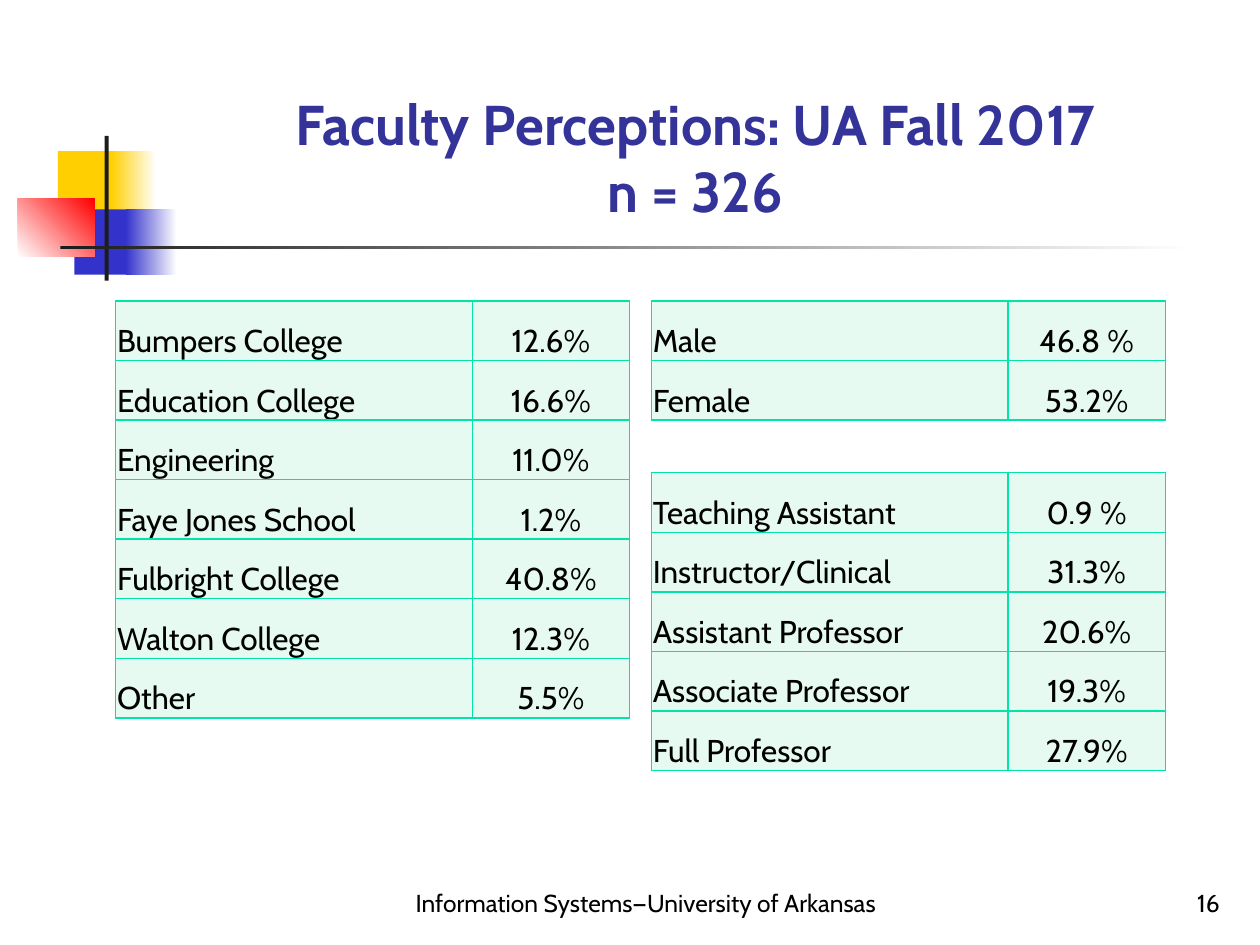
from pptx import Presentation
from pptx.dml.color import RGBColor
from pptx.enum.shapes import MSO_SHAPE
from pptx.enum.text import MSO_ANCHOR, MSO_AUTO_SIZE, PP_ALIGN
from pptx.oxml import parse_xml
from pptx.oxml.ns import nsdecls
from pptx.util import Cm, Pt

COLORS = {
    "title": "333399", "text": "000000", "dark": "1C1C1C", "white": "FFFFFF",
    "yellow": "FFCF01", "blue": "3333CC", "red": "FF0000",
    "cell": "E7FAF1", "border": "00E4A8",
}
FONT = "Cabin"
ROW_HEIGHT = 1.2
COLUMN_WIDTHS = (7.19, 3.17)
LEFT_TABLE, RIGHT_TABLE, TABLE_TOP = 2.33, 13.13, 6.07

# left, top, width, height, colours from start to end, gradient angle
ORNAMENT = [
    (1.17, 3.05, 1.22, 1.32, ["yellow"], 0),
    (2.24, 3.05, 0.91, 1.32, ["yellow", "white"], 0),
    (1.5, 4.22, 1.17, 1.32, ["blue"], 0),
    (2.54, 4.22, 1.02, 1.32, ["blue", "white"], 0),
    (0.36, 4.01, 1.55, 1.17, ["white", "red"], 45),
    (2.11, 2.74, 0.08, 2.92, ["dark"], 0),
    (1.22, 4.95, 22.86, 0.08, ["dark", "white"], 0),
]

COLLEGES = [
    ("Bumpers College", "12.6%"),
    ("Education College", "16.6%"),
    ("Engineering", "11.0%"),
    ("Faye Jones School", "1.2%"),
    ("Fulbright College", "40.8%"),
    ("Walton College", "12.3%"),
    ("Other", "5.5%"),
]
RANKS = [
    ("Teaching Assistant", "0.9 %"),
    ("Instructor/Clinical", "31.3%"),
    ("Assistant Professor", "20.6%"),
    ("Associate Professor", "19.3%"),
    ("Full Professor", "27.9%"),
]
GENDERS = [("Male", "46.8 %"), ("Female", "53.2%")]


def rgb(name):
    return RGBColor.from_string(COLORS[name])


def write(tf, text, align, size, color="text", bold=False):
    """Fill a text frame with one formatted, bottom-anchored paragraph."""
    tf.vertical_anchor = MSO_ANCHOR.BOTTOM
    p = tf.paragraphs[0]
    p.text = text
    p.alignment = align
    for r in p.runs:
        for name, value in {"name": FONT, "size": Pt(size), "bold": bold}.items():
            setattr(r.font, name, value)
        r.font.color.rgb = rgb(color)


def add_block(slide, left, top, width, height, colors, angle):
    sp = slide.shapes.add_shape(
        MSO_SHAPE.RECTANGLE, Cm(left), Cm(top), Cm(width), Cm(height))
    sp.shadow.inherit = False
    sp.line.fill.background()
    if len(colors) == 1:
        sp.fill.solid()
        sp.fill.fore_color.rgb = rgb(colors[0])
        return
    sp.fill.gradient()
    sp.fill.gradient_angle = angle
    for stop, color in zip(sp.fill.gradient_stops, colors):
        stop.color.rgb = rgb(color)


def set_title(slide, text):
    title = slide.shapes.title
    box = {"left": 3.2, "top": 0.58, "width": 21.64, "height": 4.06}
    for name, value in box.items():
        setattr(title, name, Cm(value))
    tf = title.text_frame
    tf.auto_size = MSO_AUTO_SIZE.NONE
    write(tf, text, PP_ALIGN.CENTER, 32, "title", True)


def add_footer(slide, left, width, text, align):
    sp = slide.shapes.add_textbox(Cm(left), Cm(17.35), Cm(width), Cm(1.27))
    sp.text_frame.word_wrap = True
    write(sp.text_frame, text, align, 14)


def add_borders(cell):
    tc_pr = cell._tc.get_or_add_tcPr()
    for side in ("lnL", "lnR", "lnT", "lnB"):
        tc_pr.append(parse_xml(
            f'<a:{side} {nsdecls("a")} w="{Pt(1)}"><a:solidFill>'
            f'<a:srgbClr val="{COLORS["border"]}"/></a:solidFill></a:{side}>'))


def format_cell(cell, text, align):
    margins = {"margin_left": 0.03, "margin_right": 0.03,
               "margin_top": 0.03, "margin_bottom": 0}
    for name, value in margins.items():
        setattr(cell, name, Cm(value))
    cell.vertical_anchor = MSO_ANCHOR.BOTTOM
    write(cell.text_frame, text, align, 18)
    # The anchor of a cell belongs to the cell, not to its text body.
    cell.text_frame.vertical_anchor = None
    add_borders(cell)
    cell.fill.solid()
    cell.fill.fore_color.rgb = rgb("cell")


def add_share_table(slide, left, top, rows):
    table = slide.shapes.add_table(
        len(rows), len(COLUMN_WIDTHS), Cm(left), Cm(top),
        Cm(sum(COLUMN_WIDTHS)), Cm(ROW_HEIGHT * len(rows))).table
    table.first_row = table.horz_banding = False
    for column, width in zip(table.columns, COLUMN_WIDTHS):
        column.width = Cm(width)
    for i, row in enumerate(rows):
        table.rows[i].height = Cm(ROW_HEIGHT)
        for j, align in enumerate((PP_ALIGN.LEFT, PP_ALIGN.CENTER)):
            format_cell(table.cell(i, j), row[j], align)


def main():
    prs = Presentation()
    prs.slide_width, prs.slide_height = Cm(25.4), Cm(19.05)
    slide = prs.slides.add_slide(prs.slide_layouts[5])
    for block in ORNAMENT:
        add_block(slide, *block)
    set_title(slide, "Faculty Perceptions: UA Fall 2017\vn = 326")
    add_footer(slide, 7.62, 10.8, "Information Systems—University of Arkansas",
               PP_ALIGN.CENTER)
    add_footer(slide, 19.56, 5.28, "16", PP_ALIGN.RIGHT)
    add_share_table(slide, LEFT_TABLE, TABLE_TOP, COLLEGES)
    add_share_table(slide, RIGHT_TABLE, 9.53, RANKS)
    add_share_table(slide, RIGHT_TABLE, TABLE_TOP, GENDERS)
    prs.save("out.pptx")


if __name__ == "__main__":
    main()
